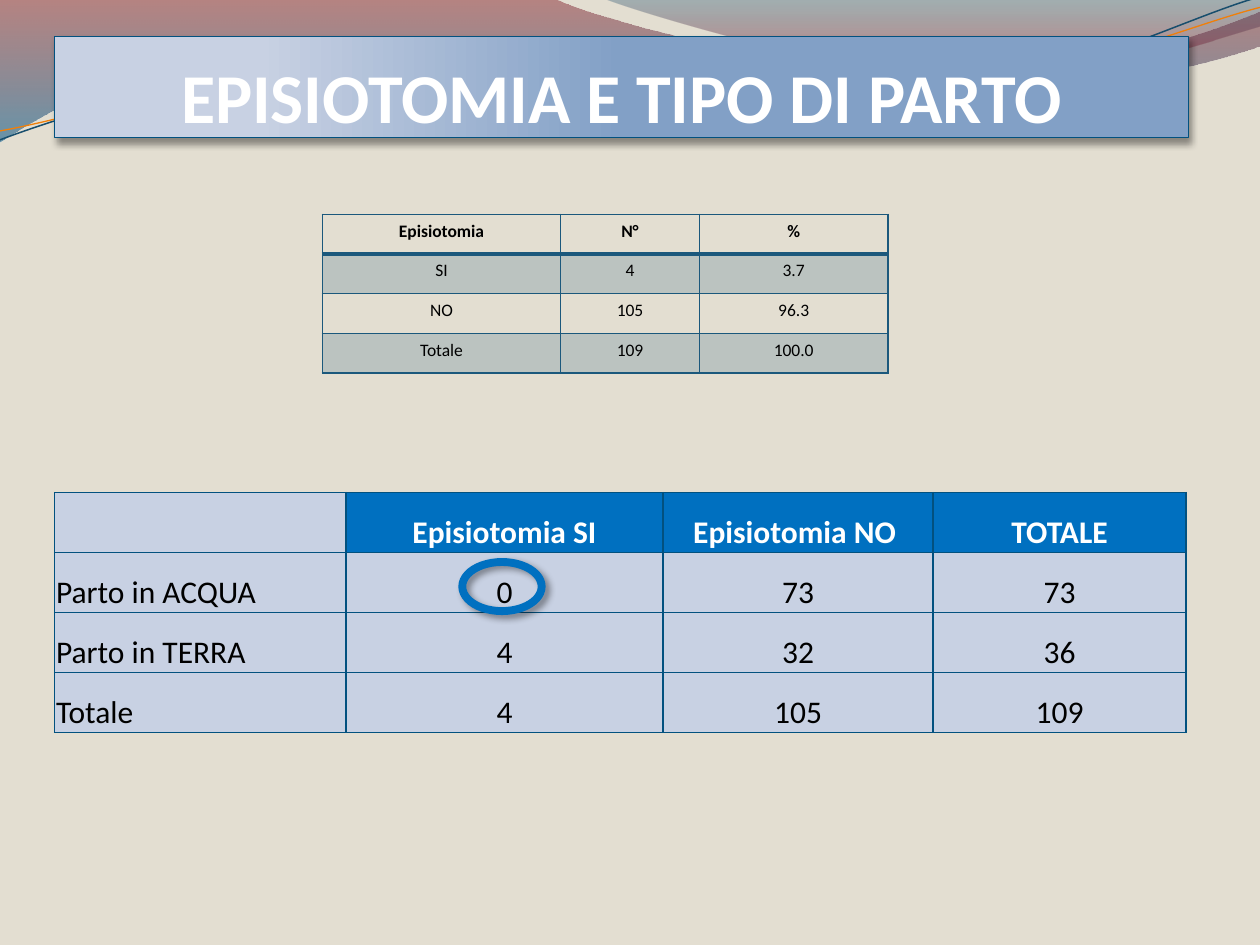
from lxml.etree import SubElement
from pptx import Presentation
from pptx.dml.color import RGBColor
from pptx.enum.shapes import MSO_SHAPE
from pptx.enum.text import MSO_ANCHOR, PP_ALIGN
from pptx.oxml import parse_xml
from pptx.oxml.ns import nsdecls, qn
from pptx.util import Cm, Pt

SAND = RGBColor(0xE3, 0xDE, 0xD1)
WHITE = RGBColor(0xFF, 0xFF, 0xFF)
BLACK = RGBColor(0x00, 0x00, 0x00)
BLUE = RGBColor(0x00, 0x70, 0xC0)
PALE_BLUE = RGBColor(0xC8, 0xD1, 0xE3)
MID_BLUE = RGBColor(0x82, 0xA0, 0xC6)
DARK_BLUE = RGBColor(0x02, 0x51, 0x7F)
STEEL = RGBColor(0x1B, 0x58, 0x7C)
NAVY = RGBColor(0x18, 0x4E, 0x6D)
ORANGE = RGBColor(0xF0, 0x7F, 0x09)
WINE = RGBColor(0x7E, 0x16, 0x21)
RED = RGBColor(0xA1, 0x0F, 0x1F)
OCEAN = RGBColor(0x00, 0x56, 0x89)
DEEP_BLUE = RGBColor(0x09, 0x44, 0x67)


def paint_gradient(shape, angle, stops):
    shape.fill.gradient()
    old = shape._element.spPr.find(qn("a:gradFill"))
    marks = "".join(
        f'<a:gs pos="{place * 1000}"><a:srgbClr val="{color}">'
        f'<a:alpha val="{opacity * 1000}"/></a:srgbClr></a:gs>'
        for place, color, opacity in stops)
    old.getparent().replace(old, parse_xml(
        f'<a:gradFill {nsdecls("a")} rotWithShape="1"><a:gsLst>{marks}</a:gsLst>'
        f'<a:lin ang="{angle * 60000}" scaled="0"/></a:gradFill>'))


def add_shadow(shape, angle):
    shape.shadow.inherit = False
    effects = shape._element.spPr.find(qn("a:effectLst"))
    shadow = SubElement(effects, qn("a:outerShdw"), blurRad=str(Pt(4)),
                        dist=str(Pt(3)), dir=str(angle * 60000), rotWithShape="0")
    color = SubElement(shadow, qn("a:srgbClr"), val=str(BLACK))
    SubElement(color, qn("a:alpha"), val="40000")


deck = Presentation()
deck.slide_width, deck.slide_height = Cm(25.4), Cm(19.05)
page = deck.slides.add_slide(deck.slide_layouts[6])
page.background.fill.solid()
page.background.fill.fore_color.rgb = SAND

waves = [
    ([(0, -0.03), (11.18, -0.03), (12.09, 0.43, 16.87, 1.6, 19.25, 1.6),
      (21.67, 1.6, 24.33, 0.66, 25.4, 0.23), (25.43, 0.91),
      (24.97, 1.12, 22.1, 1.93, 18.95, 1.91), (15.8, 1.91, 9.7, 0.71, 6.53, 0.86),
      (3.28, 0.89, 1.17, 2.11, -0.03, 2.87)],
     [(0, WINE, 45), (100, OCEAN, 55)], None, 0),
    ([(12.17, -0.03), (12.93, 0.28, 17.32, 1.57, 19.53, 1.65),
      (21.74, 1.75, 24.41, 0.81, 25.4, 0.53), (25.4, 0)],
     [(0, DEEP_BLUE, 30), (80, RED, 45)], None, 0),
    ([(0, 2.82), (1.22, 2.36, 4.01, 1.45, 7.04, 1.32),
      (10.03, 1.19, 15.06, 2.26, 18.11, 2.03), (21.16, 1.8, 23.83, 0.38, 25.35, -0.05)],
     None, NAVY, 0.85),
    ([(0, 2.64), (1.19, 2.44, 4.09, 1.55, 7.19, 1.42),
      (10.24, 1.3, 15.16, 2.11, 18.21, 1.91), (21.23, 1.7, 23.9, 0.53, 25.4, 0.15)],
     None, ORANGE, 0.75),
]
for segments, stops, line_color, line_width in waves:
    points = [(Cm(segment[-2]), Cm(segment[-1])) for segment in segments]
    builder = page.shapes.build_freeform(*points[0])
    builder.add_line_segments(points[1:], close=stops is not None)
    wave = builder.convert_to_shape()
    edges = list(wave._element.spPr.iter(qn("a:lnTo")))
    for edge, segment in zip(edges, segments[1:]):
        if len(segment) == 6:
            curve = parse_xml(f'<a:cubicBezTo {nsdecls("a")}/>')
            for x, y in zip(segment[::2], segment[1::2]):
                SubElement(curve, qn("a:pt"), x=str(Cm(x) - wave.left), y=str(Cm(y) - wave.top))
            edge.getparent().replace(edge, curve)
    wave.shadow.inherit = False
    if stops:
        paint_gradient(wave, 90, stops)
        wave.line.fill.background()
    else:
        wave.fill.background()
        wave.line.color.rgb = line_color
        wave.line.width = Pt(line_width)

title = page.shapes.add_textbox(Cm(1.1), Cm(0.73), Cm(22.86), Cm(2.05))
paint_gradient(title, 0, [(0, PALE_BLUE, 100), (18, PALE_BLUE, 100),
                          (50, MID_BLUE, 100), (100, MID_BLUE, 100)])
title.line.color.rgb = DARK_BLUE
title.line.width = Pt(0.75)
add_shadow(title, 70)
frame = title.text_frame
frame.word_wrap = True
frame.vertical_anchor = MSO_ANCHOR.BOTTOM
frame.margin_left = frame.margin_right = frame.margin_bottom = 0
frame.margin_top = Cm(0.13)
frame.text = "EPISIOTOMIA E TIPO DI PARTO"
frame.paragraphs[0].alignment = PP_ALIGN.CENTER
font = frame.paragraphs[0].runs[0].font
font.name, font.size, font.bold = "Calibri", Pt(40), True
font.color.rgb = WHITE

birth_rows = [
    ("", "Episiotomia SI", "Episiotomia NO ", "TOTALE"),
    ("Parto in ACQUA", "0", "73", "73"),
    ("Parto in TERRA", "4", "32", "36"),
    ("Totale", "4", "105", "109"),
]
summary_rows = [
    ("Episiotomia", "N°", "%"),
    ("SI", "4", "3.7"),
    ("NO", "105", "96.3"),
    ("Totale", "109", "100.0"),
]
tables = [
    (birth_rows, 1.1, 9.93, (5.87, 6.4, 5.44, 5.1), 1.21, 18, DARK_BLUE, True),
    (summary_rows, 6.5, 4.32, (4.8, 2.8, 3.8), 0.8, 10, STEEL, False),
]
for rows, left, top, widths, height, size, border, is_birth in tables:
    table = page.shapes.add_table(len(rows), len(widths), Cm(left), Cm(top),
                                  Cm(sum(widths)), Cm(height * len(rows))).table
    table.first_row = table.horz_banding = False
    for column, width in zip(table.columns, widths):
        column.width = Cm(width)
    for r, row in enumerate(rows):
        table.rows[r].height = Cm(height)
        for c, text in enumerate(row):
            cell = table.cell(r, c)
            cell.text = text
            para = cell.text_frame.paragraphs[0]
            para.alignment = PP_ALIGN.LEFT if is_birth and c == 0 else PP_ALIGN.CENTER
            para.font.size = Pt(size)
            for span in para.runs:
                span.font.name, span.font.size = "Calibri", Pt(size)
                span.font.bold = r == 0
                span.font.color.rgb = WHITE if is_birth and r == 0 else BLACK
            if is_birth:
                cell.vertical_anchor = MSO_ANCHOR.MIDDLE
                cell.margin_left = cell.margin_right = Cm(0.03)
                cell.margin_top = cell.margin_bottom = Cm(0.03)
                para.line_spacing = 1.5
                para.space_before = para.space_after = Pt(6)
            properties = cell._tc.get_or_add_tcPr()
            for side in ("L", "R", "T", "B"):
                heavy = not is_birth and r == 0 and side == "B"
                edge = SubElement(properties, qn(f"a:ln{side}"), w=str(Pt(2 if heavy else 1)))
                SubElement(SubElement(edge, qn("a:solidFill")), qn("a:srgbClr"), val=str(border))
            if is_birth:
                cell.fill.solid()
                cell.fill.fore_color.rgb = BLUE if r == 0 and c > 0 else PALE_BLUE
            elif r % 2:
                cell.fill.solid()
                cell.fill.fore_color.rgb = STEEL
                color = properties.find(qn("a:solidFill")).find(qn("a:srgbClr"))
                SubElement(color, qn("a:alpha"), val="20000")
            else:
                cell.fill.background()

ring = page.shapes.add_shape(MSO_SHAPE.OVAL, Cm(9.32), Cm(11.33), Cm(1.6), Cm(0.99))
ring.fill.background()
ring.line.color.rgb = BLUE
ring.line.width = Pt(4.5)
add_shadow(ring, 45)

deck.save("out.pptx")
